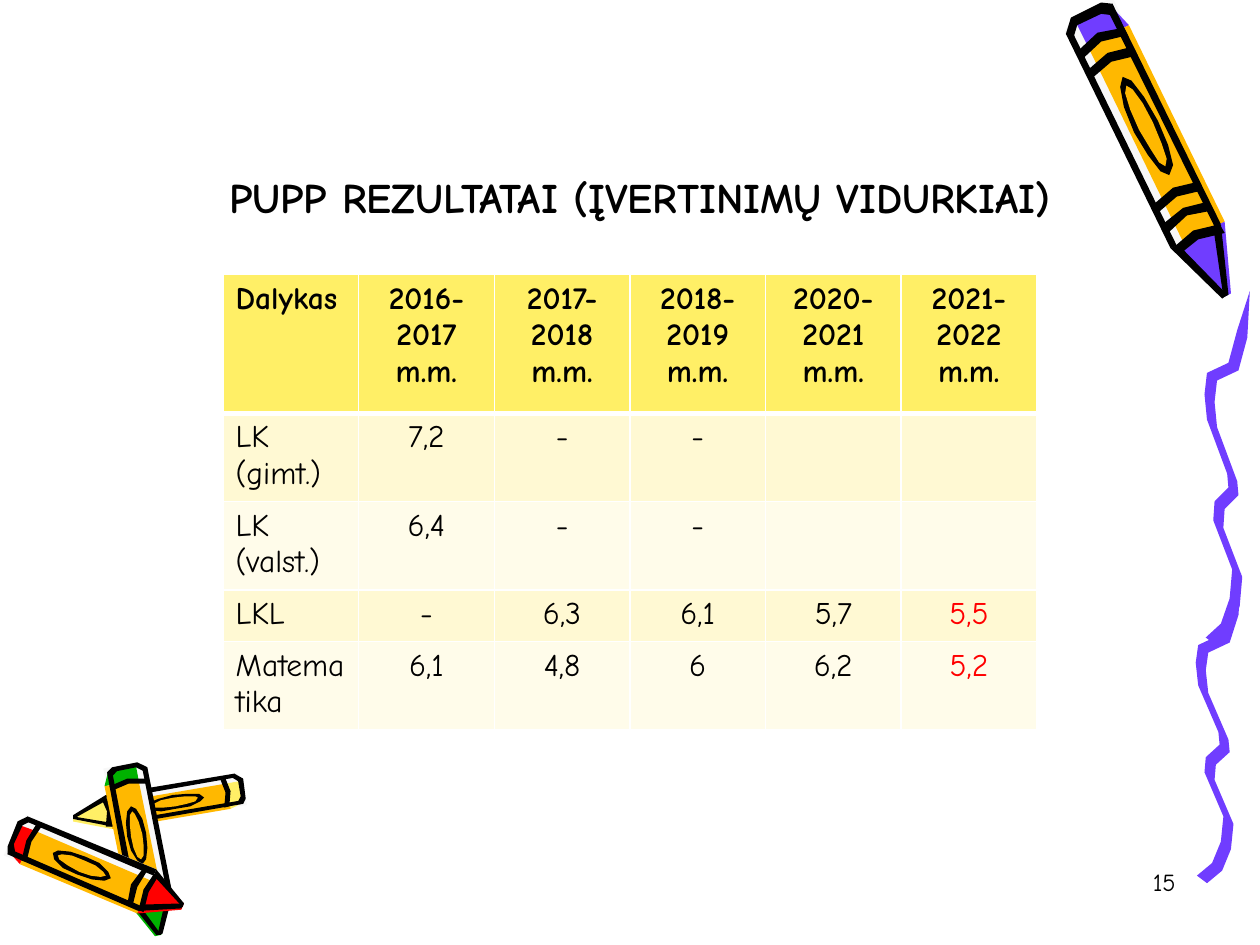
import math
import pptx
import pptx.util
import pptx.dml.color
import pptx.enum.text
import pptx.oxml
import pptx.oxml.ns

deck = pptx.Presentation()
deck.slide_width = pptx.util.Inches(10)
deck.slide_height = pptx.util.Inches(7.5)
unit = deck.slide_width // 1000
slide = deck.slides.add_slide(deck.slide_layouts[6])
align = pptx.enum.text.PP_ALIGN
violet, gold, red, green = "703DFF", "FFB800", "FF0000", "00B200"
cream, black, white = "FFEF66", "000000", "F8F8F8"


def tint(code):
    return pptx.dml.color.RGBColor.from_string(code)


def draw(group, code, spots):
    pen = group.shapes.build_freeform(*spots[0], scale=unit)
    pen.add_line_segments(spots[1:], close=True)
    shape = pen.convert_to_shape()
    shape.shadow.inherit = False
    shape.fill.solid()
    shape.fill.fore_color.rgb = tint(code)
    shape.line.fill.background()


cap, nib = 0.1, 0.79
oval = [(math.cos(math.tau * n / 12), math.sin(math.tau * n / 12)) for n in range(12)]
crayons = [
    ((862, 8), (973, 235), 23, violet, (cap, 0.17, 0.64, 0.71)),
    ((194, 626), (58, 649), 13, cream, (cap,)),
    ((99, 607), (126, 742), -17, green, (cap,)),
    ((10, 662), (145, 719), -18, red, (cap, 0.72)),
]
for tail, tip, half, ink, bands in crayons:
    parts = [
        (white, [(0, -0.5), (0.03, -1), (nib, -1), (1, 0), (nib, 1), (0, 1)]),
        (ink, [(0.02, -0.5), (0.02, 0.8), (cap, 1.1), (cap, -0.5)]),
        (gold, [(cap, -0.5), (cap, 1.1), (nib, 1.1), (nib, -0.5)]),
        (ink, [(nib, -0.8), (nib, 1.1), (1, 0.2), (1, -0.1)]),
        (black, [(0.04, -1), (0.04, -0.75), (nib, -0.75), (nib, -1)]),
        (black, [(0.02, 0.65), (0.02, 0.9), (nib, 0.95), (nib, 0.7)]),
        (black, [(0.04, -1), (0, -0.6), (0, 0.6), (0.02, 0.9), (0.05, 0.7), (0.03, 0.4), (0.03, -0.5), (0.06, -0.8)]),
        (black, [(nib, -1), (1, -0.15), (1, 0.05), (nib, -0.7)]),
        (black, [(nib, 0.95), (1, 0.1), (1, -0.1), (nib, 0.65)]),
        (black, [(0.41 + 0.17 * a, 0.1 + 0.45 * b) for a, b in oval]),
        (gold, [(0.41 + 0.14 * a, 0.1 + 0.27 * b) for a, b in oval]),
    ]
    for at in bands + (nib,):
        parts.append((black, [(at, -0.8), (at - 0.02, 0), (at, 0.9),
                              (at + 0.03, 0.9), (at + 0.01, 0), (at + 0.03, -0.8)]))
    dx, dy = tip[0] - tail[0], tip[1] - tail[1]
    size = math.hypot(dx, dy)
    group = slide.shapes.add_group_shape()
    for code, spots in parts:
        draw(group, code, [
            (tail[0] + dx * a + dy / size * half * b, tail[1] + dy * a - dx / size * half * b)
            for a, b in spots])

curve = [(1, 0), (0.83, 0.12), (0.64, 0.21), (0.17, 0.24), (0.11, 0.3), (0.17, 0.37), (0.61, 0.52),
         (0.64, 0.56), (0.33, 0.6), (0.31, 0.65), (0.72, 0.79), (0.67, 0.87), (0.47, 0.94), (0.14, 0.98)]
group = slide.shapes.add_group_shape()
for left, top, wide, high in ((949, 455, 36, 248), (956, 231, 36, 284)):
    edges = []
    for side in (-1, 1):
        edges.append([(left + wide * x + side * min(n, 1) * 4, top + high * y + side * min(n, 1) * 3)
                      for n, (x, y) in enumerate(curve)])
    draw(group, violet, edges[0] + edges[1][::-1])

labels = [
    ((83, 131, 850, 86), "PUPP REZULTATAI (ĮVERTINIMŲ VIDURKIAI)", 24, align.CENTER, True),
    ((735, 683, 208, 50), "15", 14, align.RIGHT, False),
]
texts = []
for place, text, size, side, bold in labels:
    frame = slide.shapes.add_textbox(*(n * unit for n in place)).text_frame
    frame.word_wrap = True
    texts.append((frame, text, size, side, bold, black))

years = [f"{a}-{a + 1} m.m." for a in (2016, 2017, 2018, 2020, 2021)]
data = [
    ["Dalykas"] + years,
    ["LK (gimt.)", "7,2", "-", "-", "", ""],
    ["LK (valst.)", "6,4", "-", "-", "", ""],
    ["LKL", "-", "6,3", "6,1", "5,7", "5,5"],
    ["Matematika", "6,1", "4,8", "6", "6,2", "5,2"],
]
holder = slide.shapes.add_table(len(data), len(data[0]), 177 * unit, 218 * unit, 646 * unit, 381 * unit)
grid = holder.table
grid.first_row = grid.horz_banding = False
for col in grid.columns:
    col.width = 646 * unit // len(data[0])

for r, row in enumerate(data):
    grid.rows[r].height = (41 if r else 110) * unit
    for c, text in enumerate(row):
        cell = grid.cell(r, c)
        props = cell._tc.get_or_add_tcPr()
        for tag in ("lnL", "lnR", "lnT", "lnB"):
            thick = 3 if (r, tag) in ((0, "lnB"), (1, "lnT")) else 1
            props.append(pptx.oxml.parse_xml(
                f'<a:{tag} {pptx.oxml.ns.nsdecls("a")} w="{pptx.util.Pt(thick)}"><a:solidFill>'
                f'<a:srgbClr val="FFFFFF"/></a:solidFill></a:{tag}>'))
        cell.fill.solid()
        cell.fill.fore_color.rgb = tint(("FFFCEA", "FFF9D3")[r % 2] if r else cream)
        code = red if r and c == len(years) else black
        texts.append((cell.text_frame, text, 18, align.CENTER if c else align.LEFT, r == 0, code))
holder.height = 381 * unit

for frame, text, size, side, bold, code in texts:
    para = frame.paragraphs[0]
    para.text = text
    para.alignment = side
    para.font.name = "Comic Neue"
    para.font.size = pptx.util.Pt(size)
    para.font.bold = bold
    para.font.color.rgb = tint(code)

deck.save("out.pptx")
